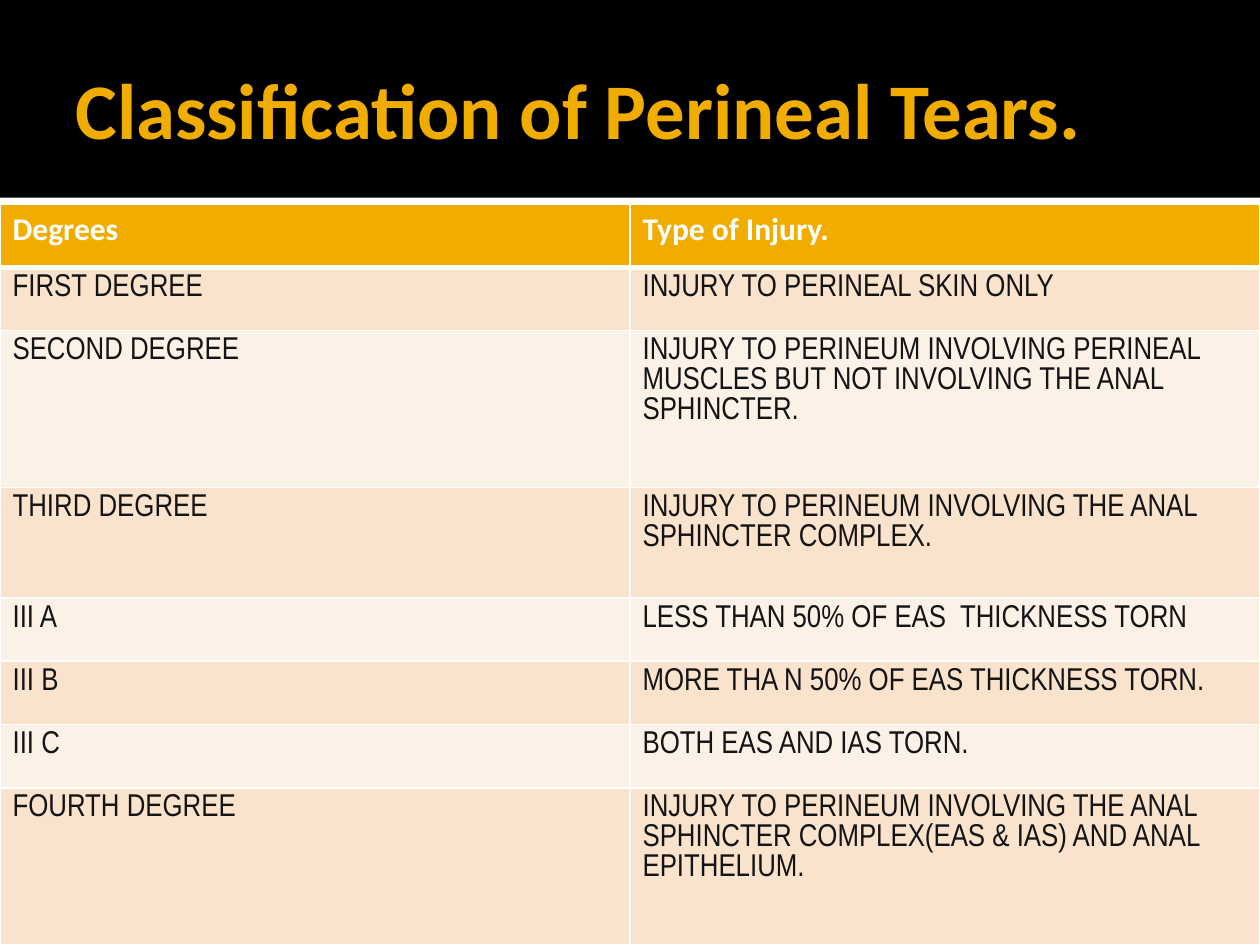
import pptx
import pptx.dml.color
import pptx.enum.shapes
import pptx.enum.text
import pptx.oxml
import pptx.oxml.ns
import pptx.util
from pptx.util import Inches

COLORS = {
    "white": "FFFFFF",
    "black": "000000",
    "gold": "F0AD00",
    "ink": "141415",
    "band_dark": "F9E3CC",
    "band_light": "FCF1E7",
}
ROWS = [
    (0.5, "Degrees", "Type of Injury."),
    (0.5, "FIRST DEGREE", "INJURY TO PERINEAL SKIN ONLY"),
    (1.24, "SECOND DEGREE", "INJURY TO PERINEUM INVOLVING PERINEAL MUSCLES BUT NOT INVOLVING THE ANAL SPHINCTER."),
    (0.87, "THIRD DEGREE", "INJURY TO PERINEUM INVOLVING THE ANAL SPHINCTER COMPLEX."),
    (0.5, "III A", "LESS THAN 50% OF EAS  THICKNESS TORN"),
    (0.5, "III B", "MORE THA N 50% OF EAS THICKNESS TORN."),
    (0.5, "III C", "BOTH EAS AND IAS TORN."),
    (1.24, "FOURTH DEGREE", "INJURY TO PERINEUM INVOLVING THE ANAL  SPHINCTER COMPLEX(EAS & IAS) AND ANAL EPITHELIUM."),
]


def color(name):
    return pptx.dml.color.RGBColor.from_string(COLORS[name])


def format_text(text_frame, font_name, size, color_name, bold):
    for paragraph in text_frame.paragraphs:
        for run in paragraph.runs:
            run.font.name = font_name
            run.font.size = pptx.util.Pt(size)
            run.font.bold = bold
            run.font.color.rgb = color(color_name)


def add_band(slide, left, top, width, height, color_name):
    band = slide.shapes.add_shape(
        pptx.enum.shapes.MSO_SHAPE.RECTANGLE,
        Inches(left), Inches(top), Inches(width), Inches(height))
    band.shadow.inherit = False
    band.fill.solid()
    band.fill.fore_color.rgb = color(color_name)
    band.line.fill.background()


def add_header(slide, left, top, width, height):
    add_band(slide, left, top + height, width, 0.05, "white")
    add_band(slide, left, top, width, height, "black")
    title = slide.shapes.add_textbox(
        Inches(left + 0.5), Inches(top + 0.17), Inches(width - 1), Inches(height - 0.2))
    text_frame = title.text_frame
    text_frame.word_wrap = True
    text_frame.vertical_anchor = pptx.enum.text.MSO_ANCHOR.MIDDLE
    text_frame.margin_right = Inches(0.05)
    text_frame.text = "Classification of Perineal Tears."
    format_text(text_frame, "Calibri", 45, "gold", True)


def set_borders(cell, widths):
    properties = cell._tc.get_or_add_tcPr()
    for position, (side, points) in enumerate(widths.items()):
        border = pptx.oxml.parse_xml(
            f'<a:{side} {pptx.oxml.ns.nsdecls("a")} w="{pptx.util.Pt(points)}">'
            f'<a:solidFill><a:srgbClr val="{COLORS["white"]}"/></a:solidFill></a:{side}>')
        properties.insert(position, border)


def add_degree_table(slide, left, top, width, height):
    table = slide.shapes.add_table(
        len(ROWS), 2, Inches(left), Inches(top), Inches(width), Inches(height)).table
    scale = height / sum(row[0] for row in ROWS)
    for row_index, (row_height, *texts) in enumerate(ROWS):
        table.rows[row_index].height = Inches(row_height * scale)
        is_header = row_index == 0
        band = "band_dark" if row_index % 2 else "band_light"
        for column_index, text in enumerate(texts):
            cell = table.cell(row_index, column_index)
            cell.text_frame.text = text
            cell.fill.solid()
            cell.fill.fore_color.rgb = color("gold" if is_header else band)
            if is_header:
                format_text(cell.text_frame, "Calibri", 18, "white", True)
            else:
                format_text(cell.text_frame, "Arial Narrow", 18, "ink", False)
            set_borders(cell, {
                "lnL": 1, "lnR": 1,
                "lnT": 3 if row_index == 1 else 1,
                "lnB": 3 if is_header else 1,
            })


def main():
    presentation = pptx.Presentation()
    presentation.slide_width = Inches(10)
    presentation.slide_height = Inches(7.5)
    slide = presentation.slides.add_slide(presentation.slide_layouts[6])
    slide.background.fill.solid()
    slide.background.fill.fore_color.rgb = color("white")
    add_header(slide, 0, 0, 10, 1.57)
    add_degree_table(slide, 0, 1.62, 10, 5.88)
    presentation.save("out.pptx")


if __name__ == "__main__":
    main()
